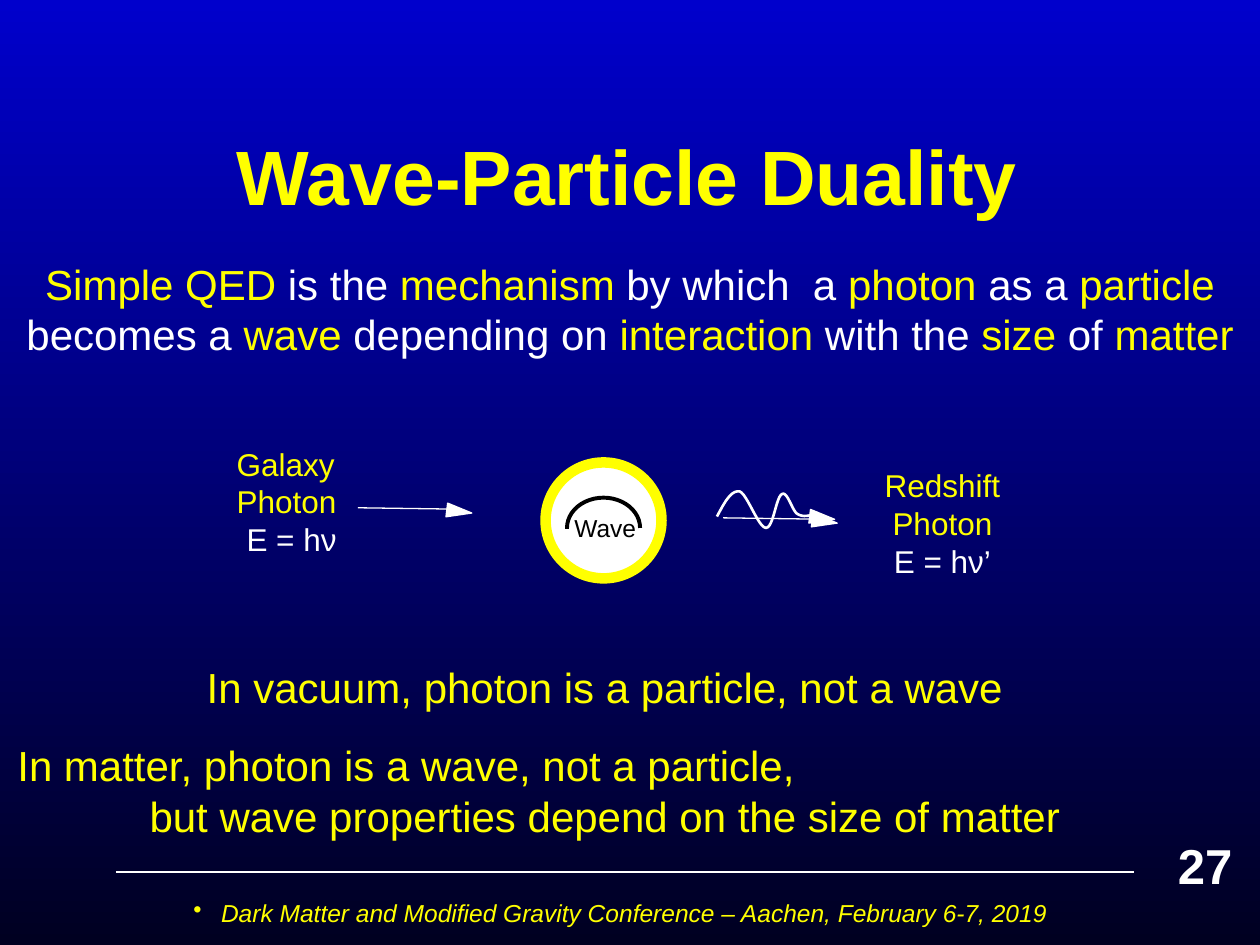
from dataclasses import dataclass

from lxml import etree
from pptx import Presentation
from pptx.dml.color import RGBColor
from pptx.enum.shapes import MSO_CONNECTOR, MSO_SHAPE
from pptx.enum.text import MSO_ANCHOR, PP_ALIGN
from pptx.oxml.ns import qn
from pptx.util import Inches, Pt

LEFT, CENTER = PP_ALIGN.LEFT, PP_ALIGN.CENTER
MIDDLE = MSO_ANCHOR.MIDDLE
STRAIGHT = MSO_CONNECTOR.STRAIGHT
OVAL, ARC, TRIANGLE = MSO_SHAPE.OVAL, MSO_SHAPE.ARC, MSO_SHAPE.ISOSCELES_TRIANGLE

FONT = "Arial"
COLORS = {"yellow": "FFFF00", "white": "FFFFFF", "black": "000000",
          "sky": "0000CC", "night": "000021"}

Box = tuple[float, float, float, float]
Point = tuple[float, float]


@dataclass
class Paragraph:
    runs: list[tuple[str, str]]
    align: PP_ALIGN = CENTER
    before: float = 0
    margin: float = 0


@dataclass
class TextBlock:
    box: Box
    size: float
    paragraphs: list[Paragraph]
    bold: bool = False
    italic: bool = False
    wrap: bool = True


SUBTITLE = [("Simple QED", "yellow"), (" is the ", "white"), ("mechanism", "yellow"),
            (" by which  a ", "white"), ("photon", "yellow"), (" as a ", "white"),
            ("particle", "yellow"), (" becomes a ", "white"), ("wave", "yellow"),
            (" depending on ", "white"), ("interaction", "yellow"),
            (" with the ", "white"), ("size", "yellow"), (" of ", "white"),
            ("matter", "yellow")]

TITLE = TextBlock((0.73, 0.58, 8.5, 1.61), 44,
                  [Paragraph([("Wave-Particle Duality", "yellow")])], bold=True)
FOOTER = TextBlock(
    (0.09, 7.08, 9.67, 0.42), 14,
    [Paragraph([("Dark Matter and Modified Gravity Conference – Aachen, "
                 "February 6-7, 2019", "yellow")])], italic=True)
BLOCKS = [
    TextBlock((9.25, 6.58, 0.75, 0.57), 28,
              [Paragraph([("27", "white")], LEFT, before=3)], bold=True),
    TextBlock((0.03, 2, 9.94, 1.25), 24, [Paragraph(SUBTITLE, before=3)]),
    TextBlock((4.46, 4.02, 0.87, 0.34), 14,
              [Paragraph([("Wave", "black")], LEFT)], wrap=False),
    TextBlock((1.78, 3.48, 1.07, 1.01), 18,
              [Paragraph([("Galaxy", "yellow")], LEFT),
               Paragraph([("Photon", "yellow")], LEFT),
               Paragraph([("E = hν", "white")])]),
    TextBlock((6.75, 3.65, 1.46, 1.01), 18,
              [Paragraph([("Redshift", "yellow")]),
               Paragraph([("Photon", "yellow")]),
               Paragraph([("E = hν’", "white")])]),
    TextBlock((-0.17, 5.2, 9.94, 1.25), 24,
              [Paragraph([("In vacuum, photon is a particle, not a wave", "yellow")],
                         before=3),
               Paragraph([("In matter, photon is a wave, not a particle,", "yellow")],
                         LEFT, before=16, margin=0.21),
               Paragraph([("but wave properties depend on the size of matter",
                           "yellow")])]),
]

WAVE_START = (5.69, 4.1)
WAVE_CURVES = [((5.75, 3.99), (5.8, 3.89), (5.87, 3.9)),
               ((5.93, 3.92), (6.02, 4.19), (6.08, 4.19)),
               ((6.14, 4.19), (6.16, 3.93), (6.21, 3.92)),
               ((6.25, 3.9), (6.29, 4.06), (6.33, 4.08)),
               ((6.38, 4.11), (6.44, 4.09), (6.49, 4.07))]


def color(name: str) -> RGBColor:
    return RGBColor.from_string(COLORS[name])


def write(frame, block: TextBlock) -> None:
    frame.word_wrap = block.wrap
    for index, content in enumerate(block.paragraphs):
        paragraph = frame.paragraphs[0] if index == 0 else frame.add_paragraph()
        paragraph.alignment = content.align
        paragraph.space_before = Pt(content.before)
        if content.margin:
            paragraph._p.get_or_add_pPr().set("marL", str(Inches(content.margin)))
        for text, tone in content.runs:
            run = paragraph.add_run()
            run.text = text
            font = run.font
            font.name, font.size = FONT, Pt(block.size)
            font.bold, font.italic = block.bold, block.italic
            font.color.rgb = color(tone)


def add_text(slide, block: TextBlock):
    frame = slide.shapes.add_textbox(*map(Inches, block.box)).text_frame
    write(frame, block)
    return frame


def add_bullet(paragraph, indent: float) -> None:
    properties = paragraph._p.get_or_add_pPr()
    properties.set("marL", str(Inches(indent)))
    properties.set("indent", str(-Inches(indent)))
    etree.SubElement(properties, qn("a:buChar")).set("char", "•")


def style(shape, line: str, width: float, fill: str | None = None) -> None:
    shape.shadow.inherit = False
    shape.line.color.rgb = color(line)
    shape.line.width = Pt(width)
    if fill:
        shape.fill.solid()
        shape.fill.fore_color.rgb = color(fill)
    else:
        shape.fill.background()


def add_figure(slide, kind: MSO_SHAPE, box: Box, line: str, width: float,
               fill: str | None = None):
    shape = slide.shapes.add_shape(kind, *map(Inches, box))
    style(shape, line, width, fill)
    return shape


def add_line(slide, start: Point, end: Point) -> None:
    line = slide.shapes.add_connector(STRAIGHT, *map(Inches, start + end))
    line.line.color.rgb = color("white")
    line.line.width = Pt(0.75)
    etree.SubElement(line._element.spPr, qn("a:effectLst"))


def add_arrowhead(slide, left: float, top: float) -> None:
    head = add_figure(slide, TRIANGLE, (left, top, 0.11, 0.2), "white", 0.75, "white")
    head.rotation = 97.1


def add_photon_arrow(slide, left: float, top: float) -> None:
    add_line(slide, (left, top), (left + 0.71, top + 0.01))
    add_arrowhead(slide, left + 0.75, top - 0.07)


def curve_points(start: Point, curves, steps: int = 12) -> list[Point]:
    """Sample a chain of cubic Bézier curves, including its start."""
    points = [start]
    for first, second, end in curves:
        for step in range(1, steps + 1):
            t = step / steps
            weights = ((1 - t) ** 3, 3 * t * (1 - t) ** 2, 3 * t ** 2 * (1 - t), t ** 3)
            points.append(tuple(sum(w * v for w, v in zip(weights, axis))
                                for axis in zip(start, first, second, end)))
        start = end
    return points


def add_wave(slide) -> None:
    start, *rest = [(Inches(x), Inches(y))
                    for x, y in curve_points(WAVE_START, WAVE_CURVES)]
    builder = slide.shapes.build_freeform(*start)
    builder.add_line_segments(rest, close=False)
    style(builder.convert_to_shape(), "white", 1.5)


def main() -> None:
    deck = Presentation()
    deck.slide_width, deck.slide_height = Inches(10), Inches(7.5)
    slide = deck.slides.add_slide(deck.slide_layouts[5])

    background = slide.background.fill
    background.gradient()
    background.gradient_angle = 270
    for stop, tone, position in zip(background.gradient_stops, ("sky", "night"), (0, 1)):
        stop.color.rgb = color(tone)
        stop.position = position

    title = slide.shapes.title
    title.left, title.top, title.width, title.height = map(Inches, TITLE.box)
    title.text_frame.vertical_anchor = MIDDLE
    write(title.text_frame, TITLE)

    add_line(slide, (0.92, 6.92), (9, 6.92))
    add_bullet(add_text(slide, FOOTER).paragraphs[0], 0.22)

    add_figure(slide, OVAL, (4.32, 3.68, 0.92, 0.92), "white", 2.25, "white")
    add_figure(slide, OVAL, (4.33, 3.67, 0.92, 0.92), "yellow", 6)
    arc = add_figure(slide, ARC, (4.5, 3.95, 0.58, 0.48), "black", 2.25)
    arc.adjustments[0], arc.adjustments[1] = 107, 0

    for block in BLOCKS:
        add_text(slide, block)

    add_photon_arrow(slide, 2.84, 4.03)
    add_wave(slide)
    add_arrowhead(slide, 6.47, 4.01)
    add_photon_arrow(slide, 5.74, 4.11)

    deck.save("out.pptx")


if __name__ == "__main__":
    main()
